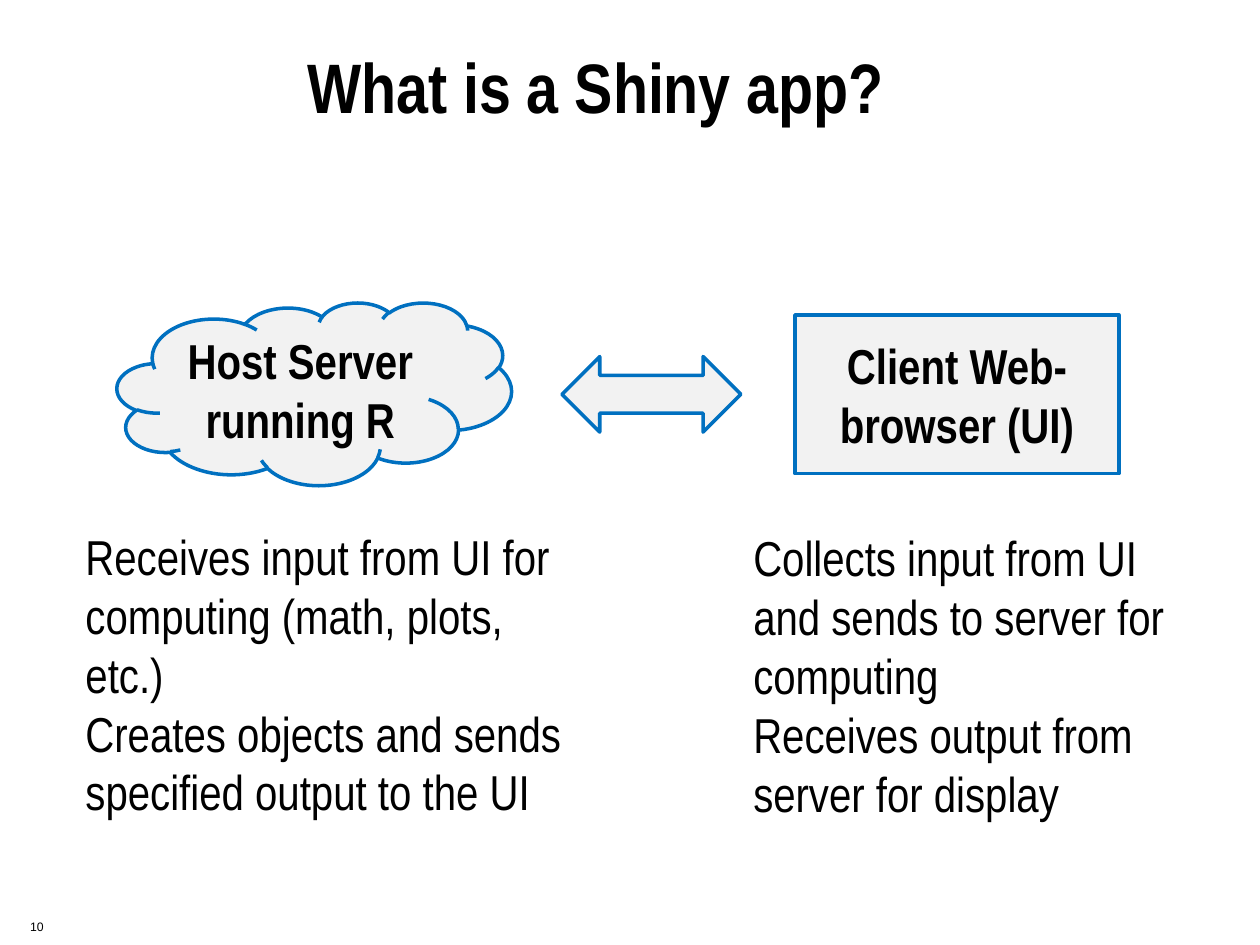
import pptx
import pptx.util
import pptx.dml.color
import pptx.enum.shapes
import pptx.enum.text

PX = 9144
BLACK = pptx.dml.color.RGBColor(0x00, 0x00, 0x00)
PALE_GREY = pptx.dml.color.RGBColor(0xF2, 0xF2, 0xF2)
BLUE = pptx.dml.color.RGBColor(0x00, 0x70, 0xC0)
SHAPES = pptx.enum.shapes.MSO_SHAPE
ALIGN = pptx.enum.text.PP_ALIGN
ANCHOR = pptx.enum.text.MSO_ANCHOR


def to_emu(box):
    return [length * PX for length in box]


def write_text(frame, *paragraphs, size=28, font="Arial Narrow", bold=False,
               align=ALIGN.LEFT, anchor=ANCHOR.TOP):
    frame.word_wrap = True
    frame.vertical_anchor = anchor
    for number, wording in enumerate(paragraphs):
        paragraph = frame.add_paragraph() if number else frame.paragraphs[0]
        paragraph.alignment = align
        run = paragraph.add_run()
        run.text = wording
        run.font.size = pptx.util.Pt(size)
        run.font.name = font
        run.font.bold = bold
        run.font.color.rgb = BLACK


def add_label(slide, box, *paragraphs, **text_format):
    label = slide.shapes.add_textbox(*to_emu(box))
    write_text(label.text_frame, *paragraphs, **text_format)


def add_outlined(slide, kind, box):
    outlined = slide.shapes.add_shape(kind, *to_emu(box))
    outlined.shadow.inherit = False
    outlined.fill.solid()
    outlined.fill.fore_color.rgb = PALE_GREY
    outlined.line.color.rgb = BLUE
    outlined.line.width = pptx.util.Pt(2)
    return outlined


def add_side(slide, box, kind, node_size, node_indent, node_name, duties, duties_drop):
    left, top, width, height = box
    node = add_outlined(slide, kind, (left + node_indent, top, *node_size))
    write_text(node.text_frame, node_name, bold=True,
               align=ALIGN.CENTER, anchor=ANCHOR.MIDDLE)
    add_label(slide, (left, top + duties_drop, width, height - duties_drop), *duties)


def build_slide(deck):
    slide = deck.slides.add_slide(deck.slide_layouts[6])
    add_label(slide, (234, 30, 716, 125), "What is a Shiny app?", size=40, bold=True)
    add_side(slide, (58, 240, 408, 419), SHAPES.CLOUD, (313, 145), 35,
             "Host Server running R",
             ("Receives input from UI for computing (math, plots, etc.)",
              "Creates objects and sends specified output to the UI"), 173)
    add_side(slide, (588, 250, 362, 410), SHAPES.RECTANGLE, (257, 126), 43,
             "Client Web-browser (UI)",
             ("Collects input from UI and sends to server for computing",
              "Receives output from server for display"), 164)
    add_outlined(slide, SHAPES.LEFT_RIGHT_ARROW, (446, 283, 142, 60))
    add_label(slide, (14, 725, 225, 19), "10", size=7, font="Arial")


def main():
    deck = pptx.Presentation()
    deck.slide_width, deck.slide_height = to_emu((1000, 750))
    build_slide(deck)
    deck.save("out.pptx")


if __name__ == "__main__":
    main()
